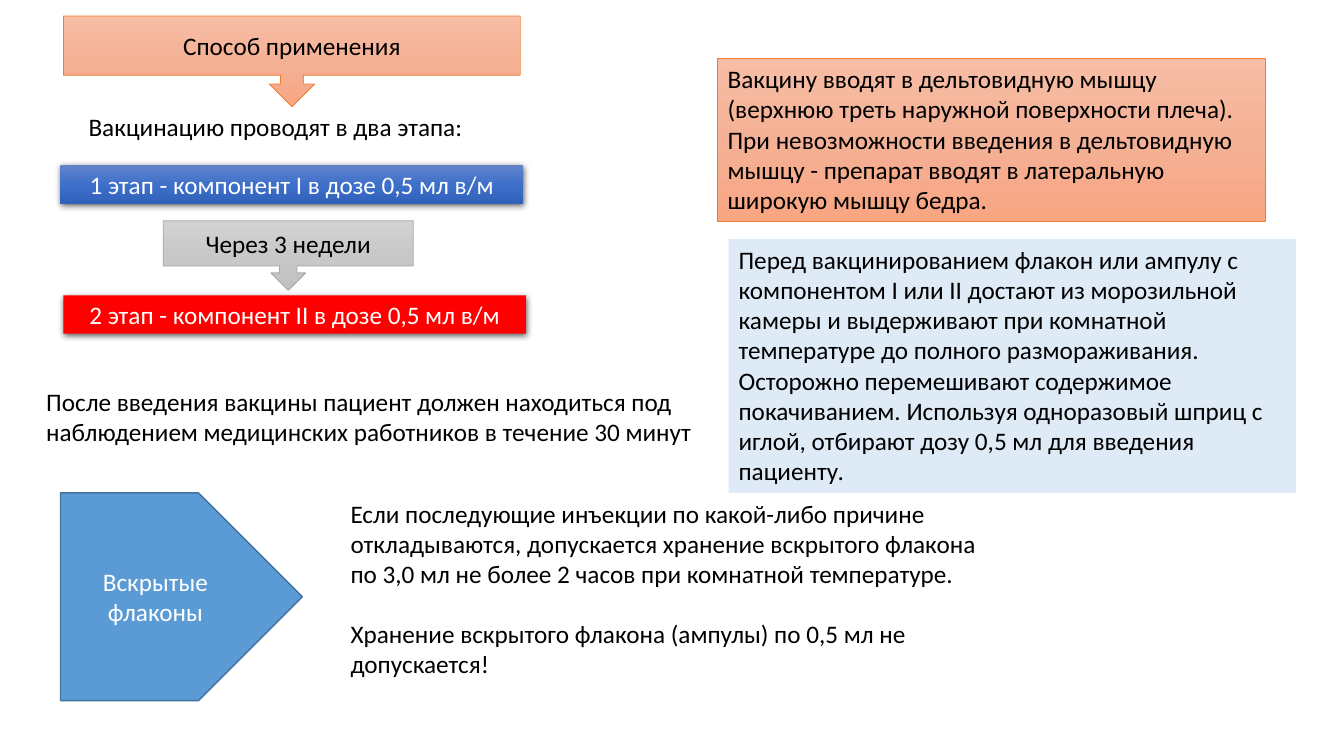
from copy import deepcopy
from lxml import etree
from pptx import Presentation, util as u
from pptx.dml.color import RGBColor
from pptx.enum import shapes as s, text as t
from pptx.oxml.ns import qn

KIND = s.MSO_SHAPE
PEACH = ["F7BDA5", "F5B196", "F8A582"]
BLUE = ["6183CB", "3E70CA", "3062BB"]
GREY = ["D2D2D2", "C8C8C8", "C0C0C0"]
MID = {"anchor": t.MSO_ANCHOR.MIDDLE, "align": t.PP_ALIGN.CENTER}

deck = Presentation()
deck.slide_width, deck.slide_height = u.Inches(13.33), u.Inches(7.5)
slide = deck.slides.add_slide(deck.slide_layouts[6])


def hue(code):
    return RGBColor.from_string(code)


def place(box, dx, dy, w, h):
    """Turn percent of the slide, counted from the box corner, into lengths."""
    x, y = box[0] + dx, box[1] + dy
    wide, high = deck.slide_width, deck.slide_height
    return [int(p * full / 100) for p, full in ((x, wide), (y, high), (w, wide), (h, high))]


def write(shape, words, color="000000", anchor=t.MSO_ANCHOR.TOP,
          align=t.PP_ALIGN.LEFT, wrap=True):
    frame = shape.text_frame
    frame.word_wrap, frame.vertical_anchor = wrap, anchor
    para = frame.paragraphs[0]
    para.alignment = align
    run = para.add_run()
    run.text = words
    for key, val in {"name": "Calibri", "size": u.Pt(18)}.items():
        setattr(run.font, key, val)
    run.font.color.rgb = hue(color)


def blend(shape, codes):
    """Fill from top to bottom with three evenly spaced colours."""
    shape.fill.gradient()
    shape.fill.gradient_angle = 270
    first = shape._element.spPr.find(".//" + qn("a:gs"))
    first.addnext(deepcopy(first))
    for i, (stop, code) in enumerate(zip(shape.fill.gradient_stops, codes)):
        stop.position = i / 2
        stop.color.rgb = hue(code)


def shade(shape):
    glow = shape._element.spPr.find(qn("a:effectLst"))
    drop = etree.SubElement(glow, qn("a:outerShdw"), blurRad="57150", dist="19050",
                            dir="5400000", algn="ctr", rotWithShape="0")
    tint = etree.SubElement(drop, qn("a:srgbClr"), val="000000")
    etree.SubElement(tint, qn("a:alpha"), val="63000")


def block(spot, kind, words, fill, line=None, width=0.5, shadow=False, **form):
    shape = slide.shapes.add_shape(kind, *spot)
    shape.shadow.inherit = False
    if isinstance(fill, list):
        blend(shape, fill)
    else:
        shape.fill.solid()
        shape.fill.fore_color.rgb = hue(fill)
    if line:
        shape.line.color.rgb = hue(line)
        shape.line.width = u.Pt(width)
    else:
        shape.line.fill.background()
    if shadow:
        shade(shape)
    write(shape, words, **form)


def label(spot, words, **form):
    write(slide.shapes.add_textbox(*spot), words, **form)


# Two-stage vaccination scheme
def scheme(box):
    call = KIND.DOWN_ARROW_CALLOUT
    block(place(box, 0.22, 0, 34, 12), call, "Способ применения", PEACH, "ED7D31", **MID)
    label(place(box, 1.35, 12, 30.1, 5.33), "Вакцинацию проводят в два этапа:", wrap=False)
    for dx, dy, words, fill in (
            (0, 19.73, "1 этап - компонент I в дозе 0,5 мл в/м", BLUE),
            (0.22, 36.93, "2 этап - компонент II в дозе 0,5 мл в/м", "FF0000")):
        block(place(box, dx, dy, 34.42, 5.07), KIND.RECTANGLE, words, fill,
              shadow=True, color="FFFFFF", **MID)
    block(place(box, 7.65, 27.07, 18.6, 9.2), call, "Через 3 недели", GREY, "A5A5A5", **MID)


# Observation after the injection
def watch(box):
    label(place(box, 0, 0, 50, 9.47),
          "После введения вакцины пациент должен находиться под наблюдением "
          "медицинских работников в течение 30 минут")


# Injection site and preparation
def advice(box):
    block(place(box, 0, 0, 40.72, 21.6), KIND.RECTANGLE,
          "Вакцину вводят в дельтовидную мышцу (верхнюю треть наружной поверхности "
          "плеча). При невозможности введения в дельтовидную мышцу - препарат вводят "
          "в латеральную широкую мышцу бедра.", PEACH, "ED7D31")
    block(place(box, 0.82, 23.87, 42.23, 33.6), KIND.RECTANGLE,
          "Перед вакцинированием флакон или ампулу с компонентом I или II достают из "
          "морозильной камеры и выдерживают при комнатной температуре до полного "
          "размораживания. Осторожно перемешивают содержимое покачиванием. Используя "
          "одноразовый шприц с иглой, отбирают дозу 0,5 мл для введения пациенту.",
          "DEEBF7")


# Storage of opened vials
def vials(box):
    block(place(box, 0, 0, 18, 27.47), KIND.PENTAGON, "Вскрытые флаконы", "5B9BD5",
          "43739E", 1, color="FFFFFF", **MID)
    label(place(box, 20.85, 0, 50, 13.47),
          "Если последующие инъекции по какой-либо причине откладываются, допускается "
          "хранение вскрытого флакона по 3,0 мл не более 2 часов при комнатной температуре.")
    label(place(box, 20.85, 15.87, 50, 9.47),
          "Хранение вскрытого флакона (ампулы) по 0,5 мл не допускается!")


def main():
    scheme((4.5, 2.13))
    watch((2.7, 50.4))
    advice((53.4, 7.73))
    vials((4.5, 65.2))
    deck.save("out.pptx")


if __name__ == "__main__":
    main()
